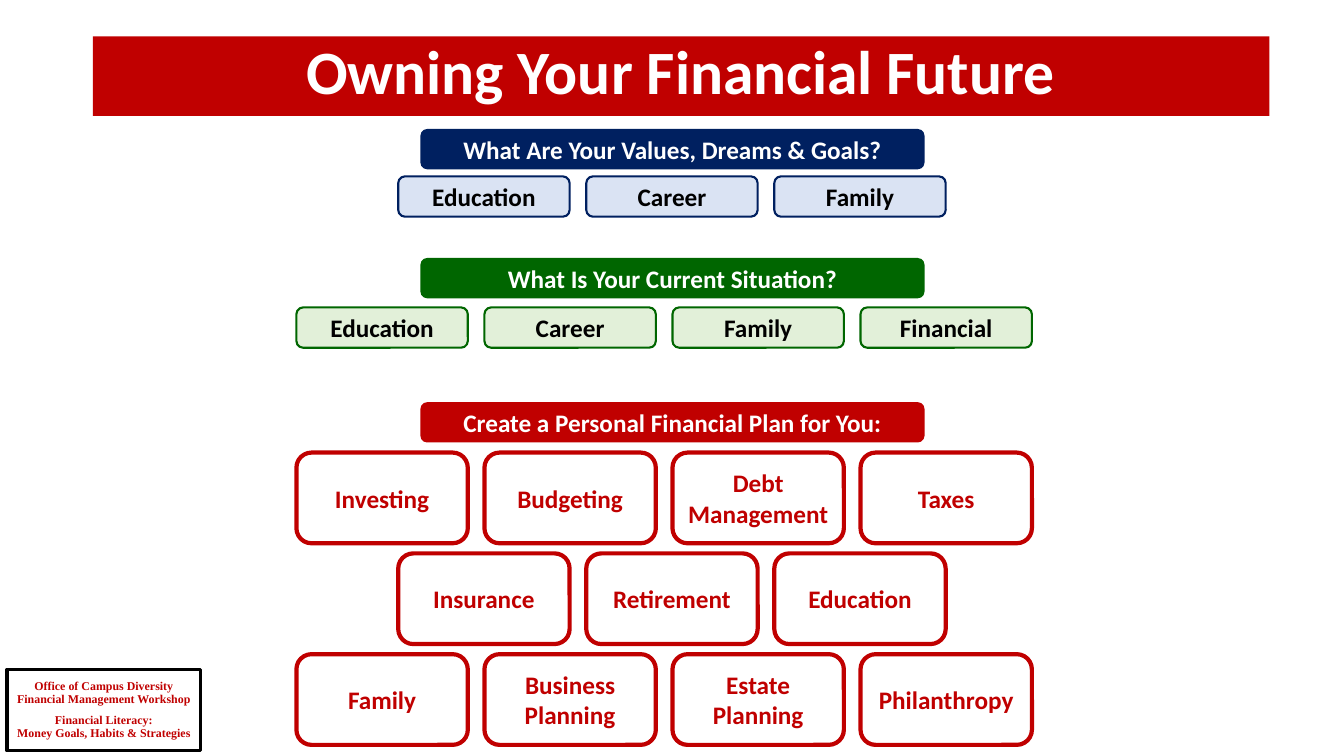
from pptx import Presentation
from pptx.dml.color import RGBColor
from pptx.enum.shapes import MSO_SHAPE as SHAPE
from pptx.enum.text import MSO_ANCHOR as ANCHOR, MSO_AUTO_SIZE as AUTO, PP_ALIGN as ALIGN
from pptx.util import Inches, Pt

RED = RGBColor(0xC0, 0x00, 0x00)
NAVY = RGBColor(0x00, 0x20, 0x60)
GREEN = RGBColor(0x00, 0x66, 0x00)
PALE_BLUE = RGBColor(0xDA, 0xE3, 0xF3)
PALE_GREEN = RGBColor(0xE2, 0xF0, 0xD9)
WHITE = RGBColor(0xFF, 0xFF, 0xFF)
BLACK = RGBColor(0x00, 0x00, 0x00)

BOX_W, BOX_STEP = 1.7, 1.865
BAR_H, PLAN_H = 0.4, 0.9


def write(p, text, size, color, font="Calibri"):
    p.alignment = ALIGN.CENTER
    r = p.add_run()
    r.text = text
    r.font.name, r.font.size, r.font.bold = font, Pt(size), True
    r.font.color.rgb = color


def add_box(s, kind, x, y, w, h, fill=None, line=None, weight=0):
    sp = s.shapes.add_shape(kind, Inches(x), Inches(y), Inches(w), Inches(h))
    sp.shadow.inherit = False
    if fill is None:
        sp.fill.background()
    else:
        sp.fill.solid()
        sp.fill.fore_color.rgb = fill
    if line is None:
        sp.line.fill.background()
    else:
        sp.line.color.rgb = line
        sp.line.width = Pt(weight)
    tf = sp.text_frame
    tf.word_wrap = True
    tf.vertical_anchor = ANCHOR.MIDDLE
    return tf


def add_title(s, text):
    sp = s.shapes.title
    sp.left, sp.top, sp.width, sp.height = map(Inches, (0.92, 0.36, 11.67, 0.79))
    sp.fill.solid()
    sp.fill.fore_color.rgb = RED
    tf = sp.text_frame
    tf.auto_size = AUTO.NONE
    tf.vertical_anchor = ANCHOR.TOP
    p = tf.paragraphs[0]
    p.line_spacing = 0.9
    write(p, text, 44, WHITE)


def add_heading(s, y, text, fill):
    tf = add_box(s, SHAPE.ROUNDED_RECTANGLE, 4.17, y, 5, BAR_H, fill)
    write(tf.paragraphs[0], text, 18, WHITE)


def add_row(s, x, y, h, labels, fill, line, weight, color):
    for i, label in enumerate(labels):
        tf = add_box(s, SHAPE.ROUNDED_RECTANGLE, x + i * BOX_STEP, y, BOX_W, h,
                     fill, line, weight)
        write(tf.paragraphs[0], label, 18, color)


def add_workshop_label(s):
    tf = add_box(s, SHAPE.RECTANGLE, 0.07, 6.64, 1.92, 0.81, None, BLACK, 2.25)
    tf.margin_left = tf.margin_right = Inches(0.05)
    groups = [("Office of Campus Diversity", "Financial Management Workshop"),
              ("Financial Literacy:", "Money Goals, Habits & Strategies")]
    p = tf.paragraphs[0]
    for g, lines in enumerate(groups):
        if g:
            p = tf.add_paragraph()
            p.space_before = Pt(6)
        p.line_spacing = 0.9
        for i, line in enumerate(lines):
            if i:
                p.add_line_break()
            write(p, line, 8.5, RED, "Times New Roman")


def main():
    prs = Presentation()
    prs.slide_width, prs.slide_height = Inches(13.33), Inches(7.5)
    s = prs.slides.add_slide(prs.slide_layouts[5])

    add_workshop_label(s)
    add_title(s, "Owning Your Financial Future")

    # Values, dreams and goals
    add_heading(s, 1.28, "What Are Your Values, Dreams & Goals?", NAVY)
    add_row(s, 3.95, 1.75, BAR_H, ("Education", "Career", "Family"),
            PALE_BLUE, NAVY, 1.5, BLACK)

    # Current situation
    add_heading(s, 2.56, "What Is Your Current Situation?", GREEN)
    add_row(s, 2.94, 3.05, BAR_H, ("Education", "Career", "Family", "Financial"),
            PALE_GREEN, GREEN, 1.5, BLACK)

    # Personal financial plan
    add_heading(s, 3.99, "Create a Personal Financial Plan for You:", RED)
    plan = [(2.94, ("Investing", "Budgeting", "Debt Management", "Taxes")),
            (3.95, ("Insurance", "Retirement", "Education")),
            (2.94, ("Family", "Business Planning", "Estate Planning", "Philanthropy"))]
    for i, (x, labels) in enumerate(plan):
        add_row(s, x, 4.49 + i, PLAN_H, labels, WHITE, RED, 3, RED)

    prs.save("out.pptx")


if __name__ == "__main__":
    main()
